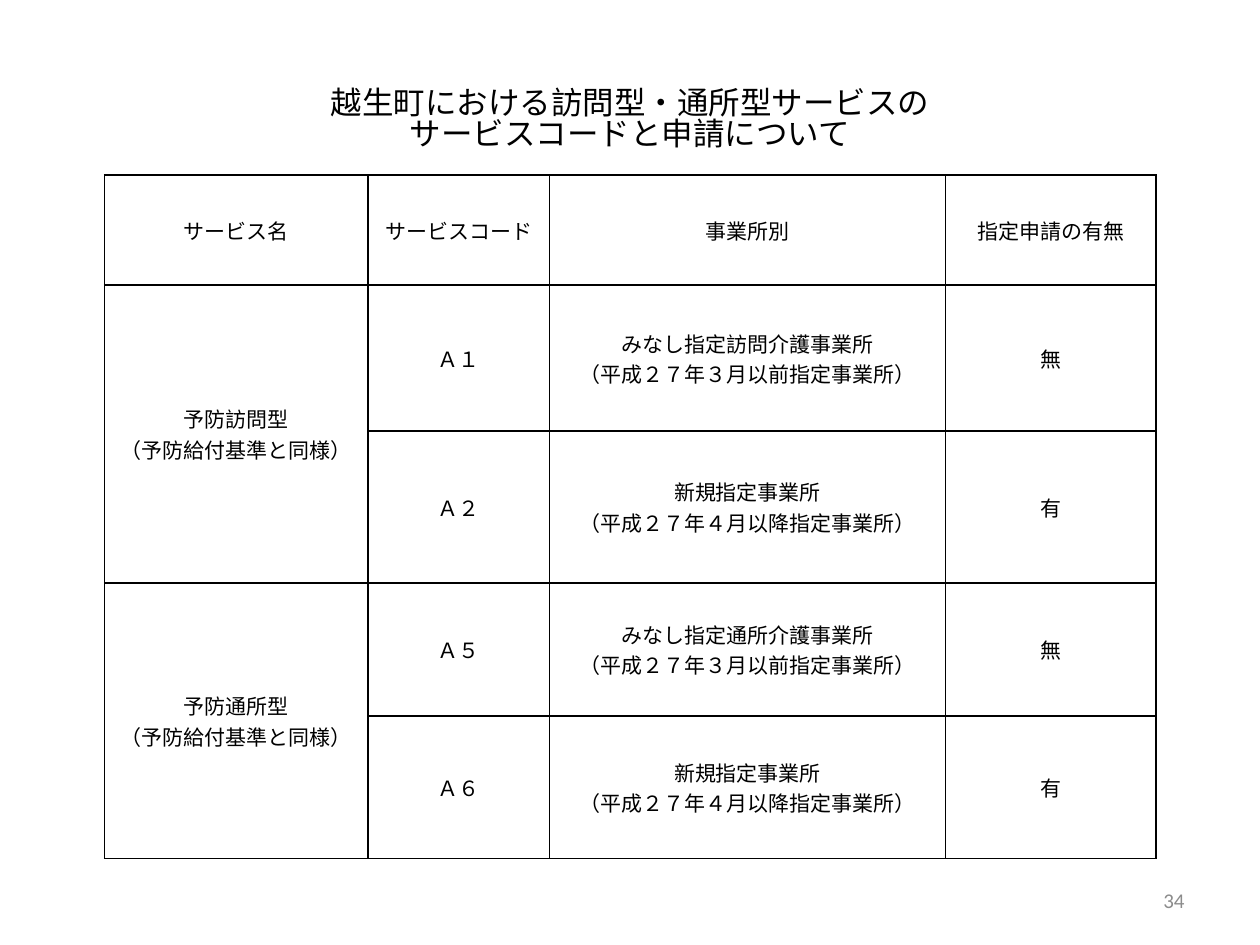
import dataclasses

import lxml.etree
import pptx
import pptx.dml.color
import pptx.enum.text
import pptx.oxml.ns
import pptx.util

Cm = pptx.util.Cm
Pt = pptx.util.Pt
RGBColor = pptx.dml.color.RGBColor
Align = pptx.enum.text.PP_ALIGN
Anchor = pptx.enum.text.MSO_ANCHOR
qn = pptx.oxml.ns.qn


@dataclasses.dataclass(frozen=True)
class Theme:
    ink: str = "000000"
    muted: str = "8C8C8C"
    title_font: str = "Arial"
    body_font: str = "Calibri"
    title_size: int = 18
    body_size: int = 12
    border_width: int = 1


THEME = Theme()
COLUMN_WIDTHS = [5.31, 3.66, 7.98, 4.24]
ROW_HEIGHTS = [2.22, 2.94, 3.06, 2.68, 2.88]
HEADERS = ["サービス名", "サービスコード", "事業所別", "指定申請の有無"]
SERVICES = [("訪問", "Ａ１", "Ａ２"), ("通所", "Ａ５", "Ａ６")]


def set_values(target, values):
    for name, value in values.items():
        setattr(target, name, value)


def format_text(text_frame, alignment, font_name, size, color, line_spacing=None):
    for paragraph in text_frame.paragraphs:
        set_values(paragraph, {"alignment": alignment, "line_spacing": line_spacing})
        for run in paragraph.runs:
            set_values(run.font, {"name": font_name, "size": Pt(size), "bold": False})
            run.font.color.rgb = RGBColor.from_string(color)


def add_title(slide, text):
    title = slide.shapes.title
    set_values(title, {"left": Cm(1.27), "top": Cm(1.32), "width": Cm(22.86), "height": Cm(2.21)})
    text_frame = title.text_frame
    text_frame.text = text
    set_values(text_frame, {
        "word_wrap": True,
        "auto_size": pptx.enum.text.MSO_AUTO_SIZE.NONE,
        "vertical_anchor": Anchor.MIDDLE,
    })
    format_text(text_frame, Align.CENTER, THEME.title_font, THEME.title_size, THEME.ink, 0.83)


def add_borders(cell):
    properties = cell._tc.get_or_add_tcPr()
    for side in ("a:lnL", "a:lnR", "a:lnT", "a:lnB"):
        line = lxml.etree.SubElement(properties, qn(side), w=str(Pt(THEME.border_width)))
        fill = lxml.etree.SubElement(line, qn("a:solidFill"))
        lxml.etree.SubElement(fill, qn("a:srgbClr"), val=THEME.ink)


def service_rows():
    rows = []
    for service, deemed_code, new_code in SERVICES:
        name = f"予防{service}型\n（予防給付基準と同様）"
        deemed = f"みなし指定{service}介護事業所\n（平成２７年３月以前指定事業所）"
        newly = "新規指定事業所\n（平成２７年４月以降指定事業所）"
        rows.append([name, deemed_code, deemed, "無"])
        rows.append(["", new_code, newly, "有"])
    return rows


def add_service_table(slide):
    rows = [HEADERS] + service_rows()
    frame = slide.shapes.add_table(
        len(rows), len(HEADERS), Cm(2.11), Cm(3.53),
        Cm(sum(COLUMN_WIDTHS)), Cm(sum(ROW_HEIGHTS)))
    table = frame.table
    set_values(table, {"first_row": False, "horz_banding": False})
    for column, width in zip(table.columns, COLUMN_WIDTHS):
        column.width = Cm(width)
    for row, height, texts in zip(table.rows, ROW_HEIGHTS, rows):
        row.height = Cm(height)
        for cell, text in zip(row.cells, texts):
            cell.text = text
            cell.vertical_anchor = Anchor.MIDDLE
            add_borders(cell)
            cell.fill.background()
            format_text(cell.text_frame, Align.CENTER, THEME.body_font, THEME.body_size, THEME.ink)
    for index in range(1, len(rows), 2):
        table.cell(index, 0).merge(table.cell(index + 1, 0))


def add_page_number(slide, number):
    shape = slide.shapes.add_textbox(Cm(18.2), Cm(17.65), Cm(5.93), Cm(1.01))
    text_frame = shape.text_frame
    text_frame.text = number
    set_values(text_frame, {"word_wrap": True, "vertical_anchor": Anchor.MIDDLE})
    format_text(text_frame, Align.RIGHT, THEME.body_font, THEME.body_size, THEME.muted)


def main():
    presentation = pptx.Presentation()
    set_values(presentation, {"slide_width": Cm(25.4), "slide_height": Cm(19.05)})
    slide = presentation.slides.add_slide(presentation.slide_layouts[5])
    add_page_number(slide, "34")
    add_title(slide, "越生町における訪問型・通所型サービスの\vサービスコードと申請について")
    add_service_table(slide)
    presentation.save("out.pptx")


if __name__ == "__main__":
    main()
